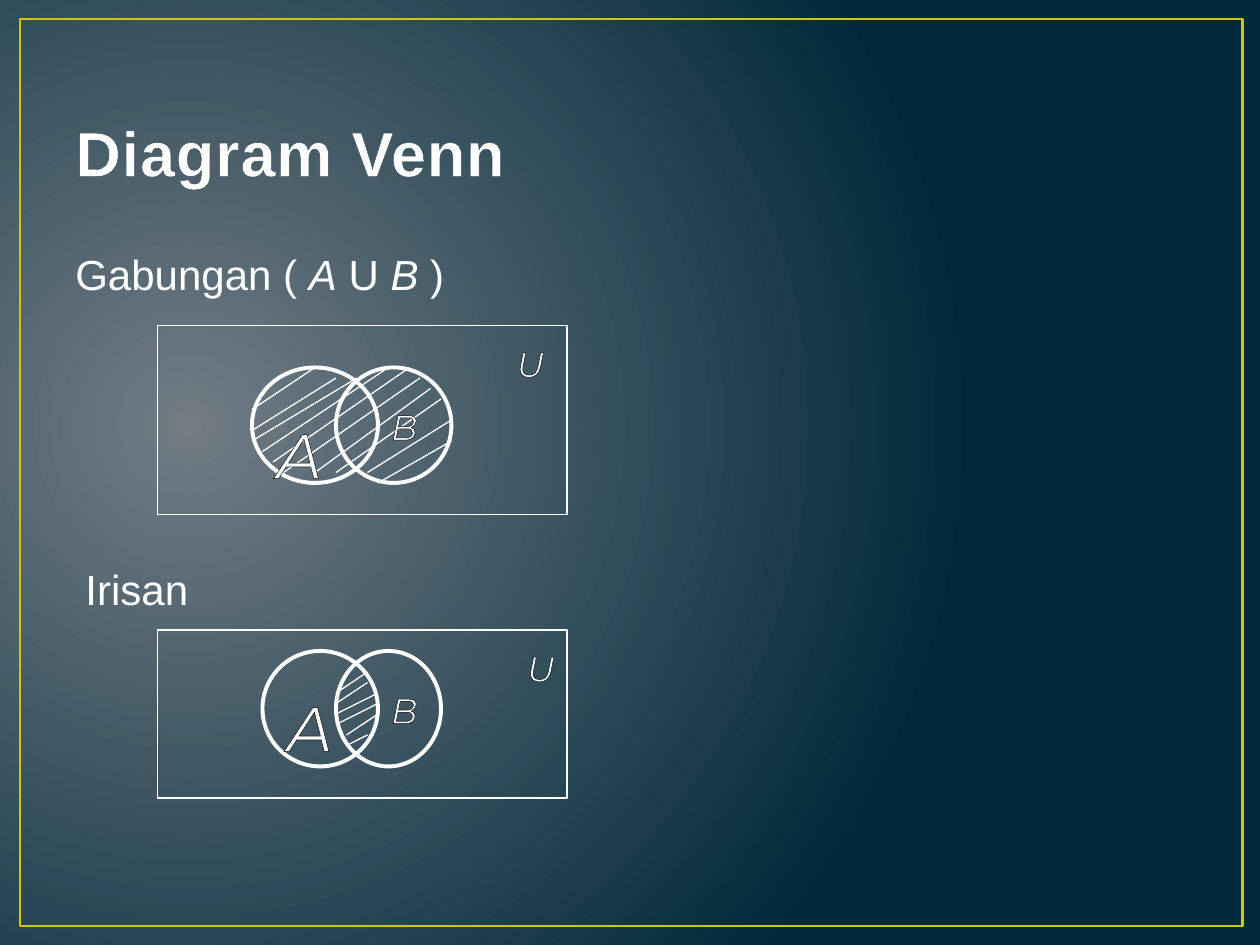
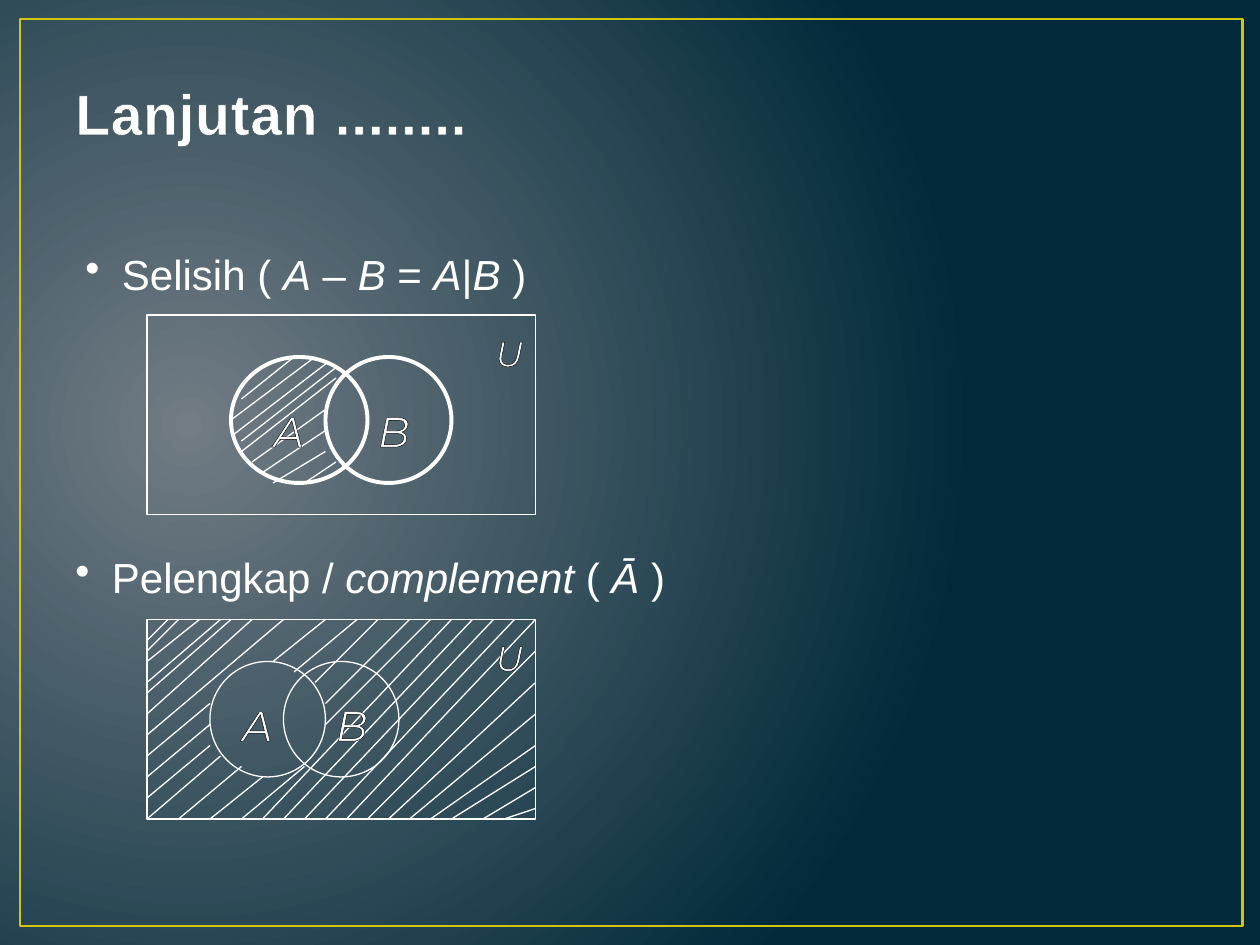
from lxml.etree import SubElement
from pptx import Presentation
from pptx.dml.color import RGBColor
from pptx.enum.dml import MSO_THEME_COLOR as Theme
from pptx.enum.shapes import MSO_CONNECTOR as Connector, MSO_SHAPE as Shape
from pptx.enum.text import MSO_ANCHOR as Anchor, MSO_AUTO_SIZE as AutoSize, PP_ALIGN as Align
from pptx.oxml.ns import qn
from pptx.util import Inches, Pt

WHITE = RGBColor(0xFF, 0xFF, 0xFF)
BLACK = RGBColor(0x00, 0x00, 0x00)
GLOW = RGBColor(0x71, 0x7C, 0x84)
NAVY = RGBColor(0x01, 0x29, 0x3A)
GOLD = RGBColor(0xCF, 0xC6, 0x0D)
TITLE_EDGE = RGBColor(0x38, 0x4F, 0x55)
BODY_FONT = "Arial"
LABEL_FONT = "Montserrat"
THIN, THICK = 0.75, 2.25

UNION_HATCH = [
    ((9, 8), (15, 4)), ((9, 10), (17, 5)), ((9, 11), (19, 5)),
    ((10, 12), (22, 4)), ((11, 13), (24, 4)), ((12, 14), (25, 5)),
    ((15, 14), (26, 6)), ((17, 14), (27, 7)), ((20, 14), (28, 9)),
    ((21, 15), (28, 11)),
]
INTERSECTION_HATCH = [
    ((17, 6), (20, 4)), ((17, 7), (20, 5)), ((17, 8), (21, 6)),
    ((17, 9), (21, 7)), ((18, 10), (21, 8)), ((18, 11), (20, 10)),
    ((18, 4), (19, 3)),
]
DIFFERENCE_HATCH = [
    ((9, 8), (14, 4)), ((8, 10), (16, 4)), ((8.1, 11.5), (17.1, 4.6)),
    ((9, 12), (18, 5)), ((9, 13), (18, 6)), ((10, 14), (17, 9)),
    ((11, 15), (17, 11)), ((12, 16), (17, 13)), ((15, 16), (18, 14)),
]


def complement_hatch():
    corner = [((0, y), (x, 0)) for y, x in
              zip((2, 3, 4, 6, 7, 9, 11), (2, 3, 5, 7, 8, 10, 13))]
    left_of_a = [((0, y), (6, y - 5)) for y in (13, 15, 17)] + [((0, 19), (7, 13))]
    above = [((12, 4), (17, 0)), ((14, 5), (20, 0)), ((16, 6), (22, 0))]
    through_b = [((17, 8), (25, 0)), ((17, 10), (27, 0))]
    below = [((3, 19), (9, 14)), ((6, 19), (11, 15)), ((9, 19), (15, 14))]
    full_height = [((x, 19), (x + 18, 0)) for x in range(11, 20, 2)]
    right_edge = [((x, 19), (37, y)) for x, y in
                  zip((21, 23, 25, 27, 29, 32, 34), (3, 6, 9, 12, 14, 16, 18))]
    return corner + left_of_a + above + through_b + below + full_height + right_edge


def twelfths(count):
    return Inches(count / 12)


def add_text(shapes, text, left, top, width, height, *, size, font=BODY_FONT,
             color=WHITE, bold=None, italic=False, align=None, anchor=Anchor.TOP,
             wrap=False, grow=False, bullet=False, spacing=None, edge=None):
    box = shapes.add_textbox(left, top, width, height)
    frame = box.text_frame
    frame.word_wrap = wrap
    frame.auto_size = AutoSize.SHAPE_TO_FIT_TEXT if grow else AutoSize.NONE
    frame.vertical_anchor = anchor
    paragraph = frame.paragraphs[0]
    paragraph.alignment = align
    if bullet:
        properties = paragraph._p.get_or_add_pPr()
        properties.set("marL", str(Inches(0.29)))
        properties.set("indent", str(-Inches(0.29)))
        SubElement(properties, qn("a:buChar"), char="•")
    for index, piece in enumerate(text.split("*")):
        if not piece:
            continue
        run = paragraph.add_run()
        run.text = piece
        run.font.name = font
        run.font.size = Pt(size)
        run.font.bold = bold
        run.font.italic = italic or index % 2 == 1
        if isinstance(color, RGBColor):
            run.font.color.rgb = color
        else:
            run.font.color.theme_color = color
        properties = run._r.get_or_add_rPr()
        if spacing:
            properties.set("spc", str(int(spacing * 100)))
        if edge:
            edge_color, edge_width = edge
            outline = SubElement(properties, qn("a:ln"), w=str(Pt(edge_width)))
            fill = SubElement(outline, qn("a:solidFill"))
            SubElement(fill, qn("a:srgbClr"), val=str(edge_color))
            properties.insert(0, outline)


def add_outline(shapes, kind, left, top, width, height, color, weight):
    shape = shapes.add_shape(kind, left, top, width, height)
    shape.shadow.inherit = False
    shape.fill.background()
    shape.line.color.rgb = color
    shape.line.width = Pt(weight)


def add_hatch_line(shapes, start, end):
    line = shapes.add_connector(Connector.STRAIGHT, *map(twelfths, start + end))
    line.line.color.rgb = WHITE
    line.line.width = Pt(THIN)
    SubElement(line._element.spPr, qn("a:effectLst"))


def add_venn(shapes, frame, circles, hatch, labels, weight=THICK):
    left, top, width, height = frame
    add_outline(shapes, Shape.RECTANGLE, *map(twelfths, frame), WHITE, THIN)
    for x, y, across, down in circles:
        add_outline(shapes, Shape.OVAL, *map(twelfths, (left + x, top + y, across, down)),
                    WHITE, weight)
    for (x1, y1), (x2, y2) in hatch:
        add_hatch_line(shapes, (left + x1, top + y1), (left + x2, top + y2))
    for letter, x, y, size in labels:
        add_text(shapes, letter, twelfths(left + x), twelfths(top + y),
                 Inches(0.25), Inches(0.4), size=size, font=LABEL_FONT,
                 italic=True, align=Align.CENTER, edge=(BLACK, 0.75))


def add_heading(slide, text, left, top, width, bullet=False):
    add_text(slide.shapes, text, Inches(left), Inches(top), Inches(width), Inches(0.51),
             size=24, grow=True, bullet=bullet)


def start_slide(deck, title, title_box, title_size):
    slide = deck.slides.add_slide(deck.slide_layouts[6])
    fill = slide.background.fill
    fill.gradient()
    for stop, color, position in zip(fill.gradient_stops, (GLOW, NAVY), (0, 1)):
        stop.color.rgb = color
        stop.position = position
    gradient = slide.element.find(".//" + qn("a:gradFill"))
    gradient.remove(gradient.find(qn("a:lin")))
    circle = SubElement(gradient, qn("a:path"), path="circle")
    SubElement(circle, qn("a:fillToRect"), l="15000", t="50000", r="85000", b="60000")
    add_outline(slide.shapes, Shape.RECTANGLE, *map(Inches, (0.16, 0.15, 9.7, 7.2)), GOLD, 1.5)
    add_text(slide.shapes, title, *map(Inches, title_box), size=title_size,
             color=Theme.BACKGROUND_1, bold=True, anchor=Anchor.BOTTOM, wrap=True,
             spacing=0.5, edge=(TITLE_EDGE, 1.05))
    return slide


def build_union_and_intersection(deck):
    slide = start_slide(deck, "Diagram Venn", (0.5, 0.3, 9, 1.25), 36)
    add_venn(slide.shapes, (15, 31, 39, 18), [(9, 4, 12, 11), (17, 4, 11, 11)],
             UNION_HATCH, [("A", 12, 8, 36), ("B", 22, 7, 20), ("U", 34, 1, 20)])
    add_venn(slide.shapes, (15, 60, 39, 16), [(10, 2, 11, 11), (17, 2, 10, 11)],
             INTERSECTION_HATCH, [("A", 13, 5, 36), ("B", 22, 5, 20), ("U", 35, 1, 20)])
    add_heading(slide, "Gabungan ( *A* U *B* )", 0.5, 1.92, 3.16)
    add_heading(slide, "Irisan", 0.58, 4.42, 1.12)


def build_difference_and_complement(deck):
    slide = start_slide(deck, "Lanjutan ........", (0.5, 0.58, 8.17, 0.63), 32.4)
    difference = slide.shapes.add_group_shape().shapes
    add_venn(difference, (14, 30, 37, 19), [(8, 4, 13, 12), (17, 4, 12, 12)],
             DIFFERENCE_HATCH, [("A", 12, 8, 24), ("B", 22, 8, 24), ("U", 33, 1, 20)])
    complement = slide.shapes.add_group_shape().shapes
    add_venn(complement, (14, 59, 37, 19), [(6, 4, 11, 11), (13, 4, 11, 11)],
             complement_hatch(), [("A", 9, 7, 24), ("B", 18, 7, 24), ("U", 33, 1, 20)], THIN)
    add_heading(slide, "Selisih ( *A* – *B* = *A*|*B* )", 0.58, 1.92, 3.74, bullet=True)
    add_heading(slide, "Pelengkap / *complement *( *Ā* )", 0.5, 4.33, 4.93, bullet=True)


def main():
    deck = Presentation()
    deck.slide_width, deck.slide_height = Inches(10), Inches(7.5)
    build_union_and_intersection(deck)
    build_difference_and_complement(deck)
    deck.save("out.pptx")


if __name__ == "__main__":
    main()
